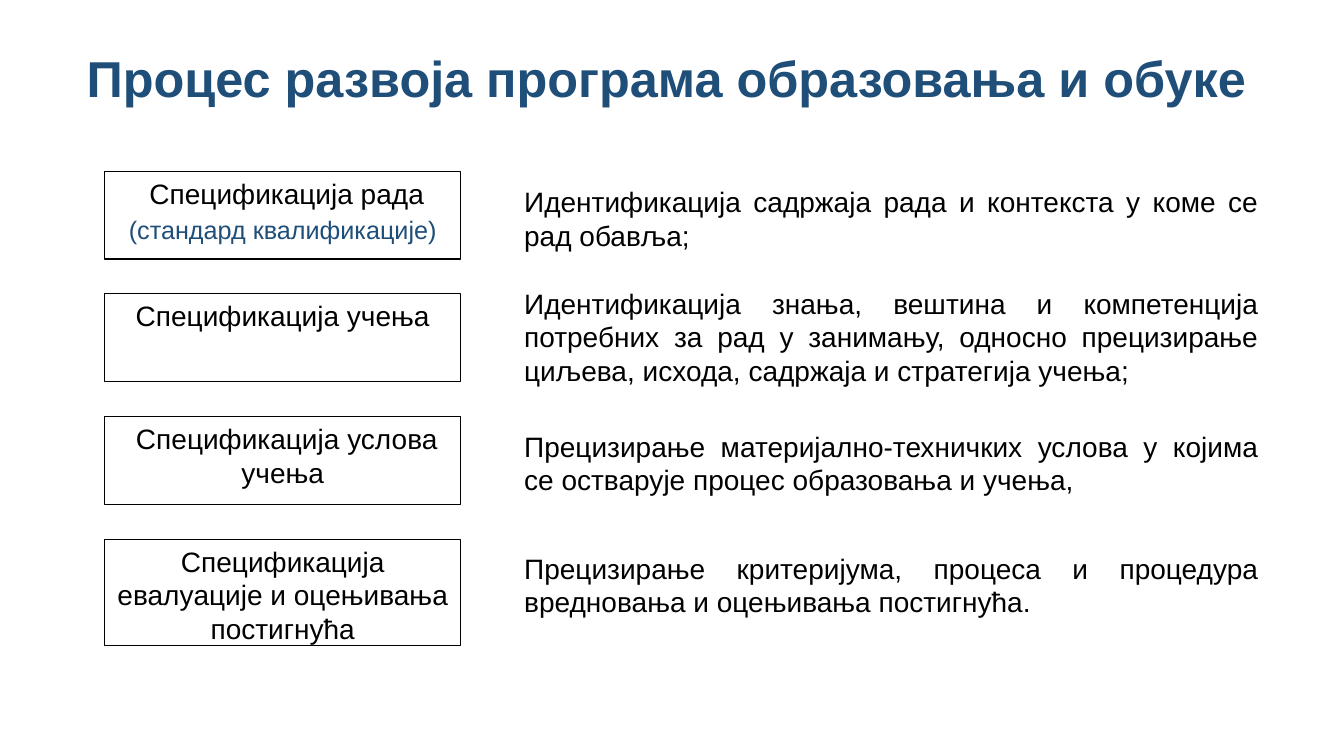
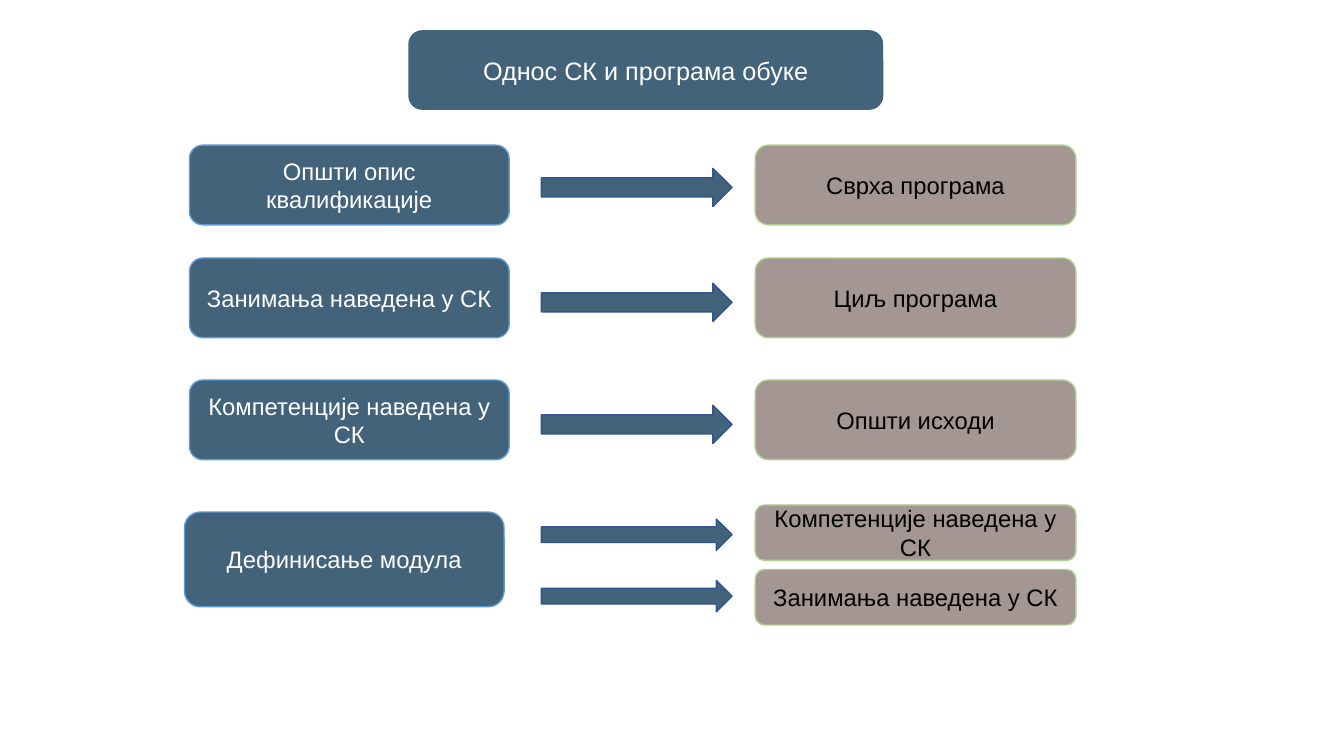
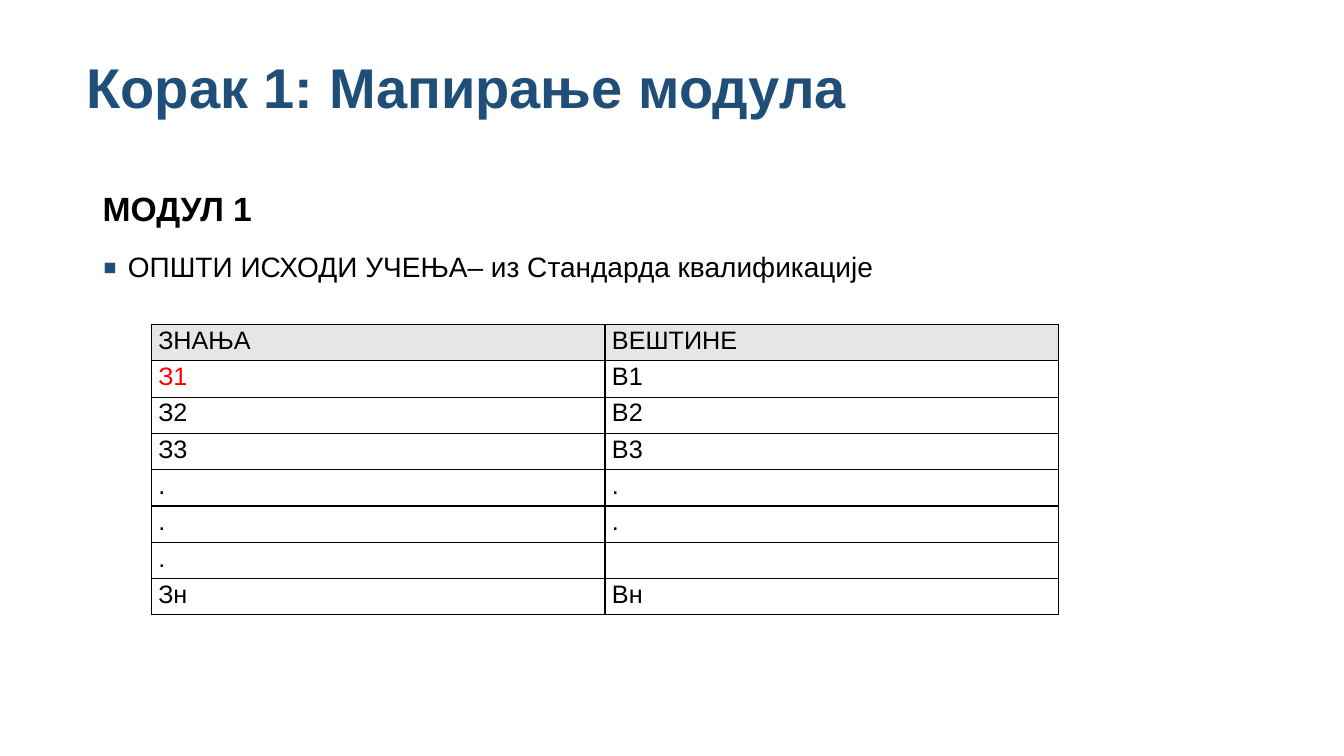
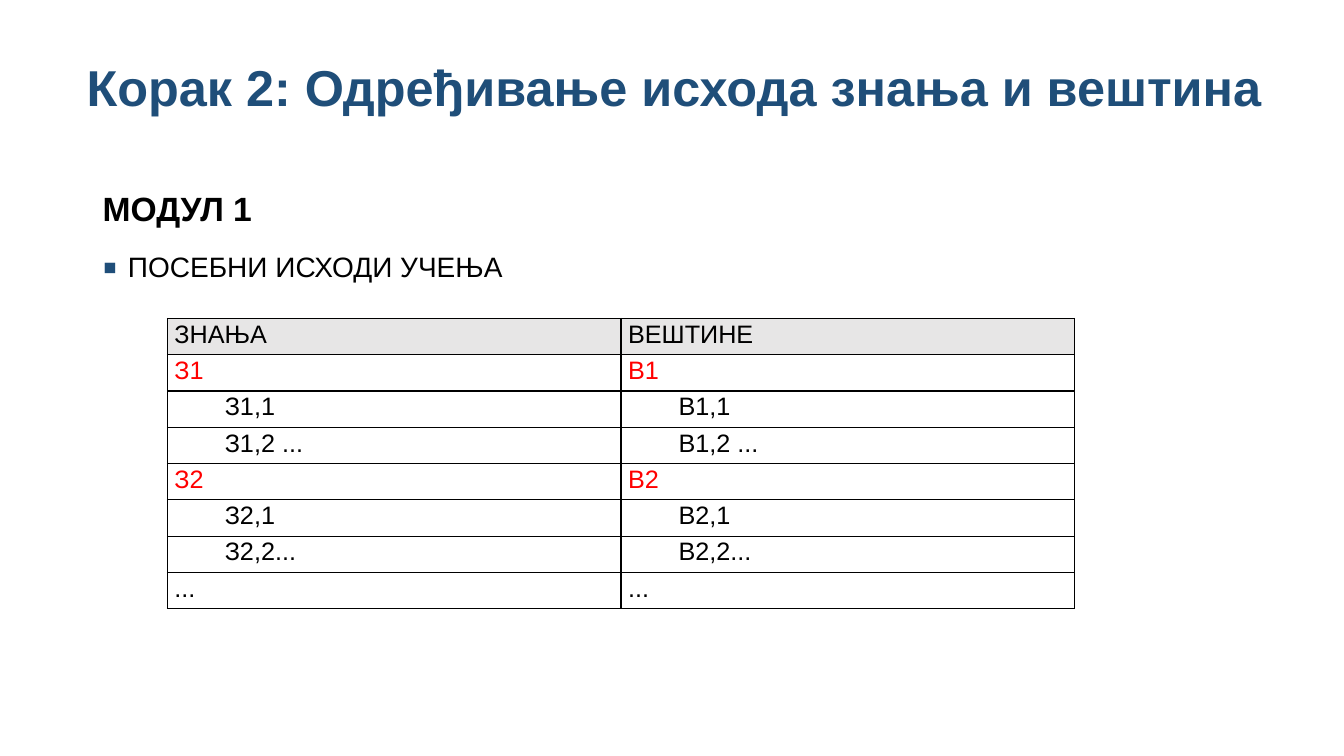
from dataclasses import dataclass

from lxml import etree
from pptx import Presentation
from pptx.dml.color import RGBColor
from pptx.enum.shapes import MSO_SHAPE
from pptx.enum.text import MSO_ANCHOR, MSO_AUTO_SIZE, PP_ALIGN
from pptx.oxml.ns import qn
from pptx.util import Inches, Pt

RECT, ROUND, ARROW = (MSO_SHAPE.RECTANGLE, MSO_SHAPE.ROUNDED_RECTANGLE,
                      MSO_SHAPE.RIGHT_ARROW)
LEFT, MID, JUST = PP_ALIGN.LEFT, PP_ALIGN.CENTER, PP_ALIGN.JUSTIFY
TOP, CENTER = MSO_ANCHOR.TOP, MSO_ANCHOR.MIDDLE
TITLE_ONLY, BLANK = 5, 6

FONT = "Arial"
INK = {
    "navy": "1F4E79", "black": "000000", "white": "FFFFFF", "red": "FF0000",
    "steel": "42637A", "sky": "5B9BD5", "taupe": "A49692", "green": "A9D18E",
    "edge": "325491", "head": "E7E6E6",
}


@dataclass
class Step:
    """A process step: its box, the box height and the text beside it."""
    name: str
    high: float
    note: str
    top: float
    tall: float
    after: float = 3
    sub: str = ""
    shift: float = 0


@dataclass
class Look:
    """Fill, outline and text colour of a shape."""
    fill: str
    line: str = ""
    width: float = 1
    ink: str = "black"


@dataclass
class Node:
    """A labelled block of the relation diagram."""
    label: str
    left: float
    top: float
    wide: float
    high: float
    look: Look


@dataclass
class Cell:
    """Table text; a sub-item is indented."""
    text: str
    ink: str = "black"
    sub: bool = False


BLUE = Look("steel", "sky", ink="white")
GREY = Look("taupe", "green")
BAND = Look("steel", "steel", 1.5, "white")
DART = Look("steel", "edge")
FRAME = Look("white", "black", 0.75)
PLAIN = Look("white")


def color(name: str) -> RGBColor:
    return RGBColor.from_string(INK[name])


def write(frame, text: str, *, size: float, ink: str = "black",
          bold: bool = False, align=LEFT, space: float = 1, before: float = 0,
          after: float = 0, indent: float = 0, margin: float = 0,
          bullet: str = "", more: bool = False) -> None:
    """Write one paragraph; more=True adds it below the earlier ones."""
    para = frame.add_paragraph() if more else frame.paragraphs[0]
    para.alignment, para.line_spacing = align, space
    para.space_before, para.space_after = Pt(before), Pt(after)
    props = para._p.get_or_add_pPr()
    props.set("marL", str(Inches(margin)))
    props.set("indent", str(Inches(indent)))
    if bullet:
        tint = etree.SubElement(props, qn("a:buClr"))
        etree.SubElement(tint, qn("a:srgbClr"), val=INK["navy"])
        etree.SubElement(props, qn("a:buSzPct"), val="150000")
        etree.SubElement(props, qn("a:buFont"), typeface=FONT)
        etree.SubElement(props, qn("a:buChar"), char=bullet)
    run = para.add_run()
    run.text = text
    font = run.font
    font.name, font.size, font.bold = FONT, Pt(size), bold
    font.color.rgb = color(ink)


def shape(slide, kind, left: float, top: float, wide: float, high: float,
          look: Look, anchor=CENTER):
    """Draw a preset shape and return its text frame."""
    item = slide.shapes.add_shape(kind, Inches(left), Inches(top),
                                  Inches(wide), Inches(high))
    item.shadow.inherit = False
    item.fill.solid()
    item.fill.fore_color.rgb = color(look.fill)
    if look.line:
        item.line.color.rgb = color(look.line)
        item.line.width = Pt(look.width)
    else:
        item.line.fill.background()
    frame = item.text_frame
    frame.word_wrap, frame.vertical_anchor = True, anchor
    return frame


def titled(deck, text: str, size: float, top: float = 0.4,
           high: float = 0.99):
    """Add a slide with the shared title style."""
    slide = deck.slides.add_slide(deck.slide_layouts[TITLE_ONLY])
    title = slide.shapes.title
    title.left, title.top = Inches(0.76), Inches(top)
    title.width, title.height = Inches(11.88), Inches(high)
    frame = title.text_frame
    frame.word_wrap, frame.vertical_anchor = True, CENTER
    frame.auto_size = MSO_AUTO_SIZE.NONE
    write(frame, text, size=size, ink="navy", bold=True, space=0.9)
    return slide


def border(cell) -> None:
    props = cell._tc.get_or_add_tcPr()
    for side in ("lnL", "lnR", "lnT", "lnB"):
        line = etree.SubElement(props, qn(f"a:{side}"), w=str(Pt(1)))
        fill = etree.SubElement(line, qn("a:solidFill"))
        etree.SubElement(fill, qn("a:srgbClr"), val=INK["black"])


def grid(slide, left: float, top: float, rows: list[tuple[Cell, Cell]]) -> None:
    """Draw the two-column table of knowledge and skills."""
    rows = [(Cell("ЗНАЊА"), Cell("ВЕШТИНЕ")), *rows]
    high = 0.36
    table = slide.shapes.add_table(len(rows), 2, Inches(left), Inches(top),
                                   Inches(9), Inches(high * len(rows))).table
    table.first_row = table.horz_banding = False
    for i, row in enumerate(rows):
        table.rows[i].height = Inches(high)
        for j, item in enumerate(row):
            cell = table.cell(i, j)
            cell.margin_left = cell.margin_right = Inches(0.07)
            cell.margin_top = cell.margin_bottom = 0
            border(cell)
            if i:
                cell.fill.background()
            else:
                cell.fill.solid()
                cell.fill.fore_color.rgb = color("head")
            if item.text:
                write(cell.text_frame, item.text, size=18, ink=item.ink,
                      space=1.07, margin=0.5 if item.sub else 0)


def module(deck, title: str, size: float, goal: str, left: float, top: float,
           rows: list[tuple[Cell, Cell]]) -> None:
    """Build a module slide: title, heading, bullet and table."""
    slide = titled(deck, title, size)
    box = slide.shapes.add_textbox(Inches(0.92), Inches(1.79),
                                   Inches(11.5), Inches(1.2))
    frame = box.text_frame
    frame.word_wrap = True
    write(frame, "МОДУЛ 1", size=24, bold=True, space=1.07, after=8)
    write(frame, goal, size=20, space=0.9, before=10, margin=0.25,
          indent=-0.25, bullet="▪", more=True)
    grid(slide, left, top, rows)


def process(deck) -> None:
    slide = titled(deck, "Процес развоја програма образовања и обуке", 36,
                   0.37, 0.87)
    steps = [
        Step("Спецификација рада", 0.87,
             "Идентификација садржаја рада и контекста у коме се рад обавља;",
             1.78, 0.71, sub="(стандард квалификације)", shift=0.08),
        Step("Спецификацијa учења", 0.87,
             "Идентификација знања, вештина и компетенција потребних за рад у "
             "занимању, односно прецизирање циљева, исхода, садржаја и "
             "стратегија учења;", 2.79, 1.03),
        Step("Спецификацијa услова учења", 0.87,
             "Прецизирање материјално-техничких услова у којима се остварује "
             "процес образовања и учења,", 4.21, 0.73, shift=0.08),
        Step("Спецификацијa евалуaције и оцењивањa постигнућа", 1.06,
             "Прецизирање критеријума, процеса и процедура вредновања и "
             "оцењивања постигнућа.", 5.42, 0.87, after=6),
    ]
    for i, step in enumerate(steps):
        frame = shape(slide, RECT, 1.04, 1.7 + 1.216 * i, 3.53, step.high,
                      FRAME, TOP)
        write(frame, step.name, size=20, align=MID, indent=step.shift)
        if step.sub:
            write(frame, step.sub, size=18, ink="navy", align=MID, before=3,
                  more=True)
        note = shape(slide, RECT, 5.1, step.top, 7.48, step.tall, PLAIN, TOP)
        write(note, step.note, size=20, align=JUST, after=step.after)


def relation(deck) -> None:
    slide = deck.slides.add_slide(deck.slide_layouts[BLANK])
    head = shape(slide, ROUND, 4.06, 0.31, 4.69, 0.77, BAND)
    write(head, "Однос СК и програма обуке", size=18, ink="white", align=MID)

    # Blocks on both sides
    pairs = [
        (1.44, "Општи опис квалификације", "Сврха програма"),
        (2.56, "Занимања наведена у СК", "Циљ програма"),
        (3.77, "Компетенције наведена у СК", "Општи исходи"),
    ]
    nodes = [Node("Дефинисање модула", 1.83, 5.08, 3.17, 0.94, BLUE),
             Node("Компетенције наведена у СК", 7.49, 5.01, 3.18, 0.55, GREY),
             Node("Занимања наведена у СК", 7.49, 5.65, 3.18, 0.55, GREY)]
    for top, source, target in pairs:
        nodes += [Node(source, 1.88, top, 3.17, 0.79, BLUE),
                  Node(target, 7.49, top, 3.18, 0.79, GREY)]
    for node in nodes:
        frame = shape(slide, ROUND, node.left, node.top, node.wide, node.high,
                      node.look)
        write(frame, node.label, size=17, ink=node.look.ink, align=MID)

    # Arrows between them
    for top, high in ((1.67, 0.38), (2.81, 0.38), (4.02, 0.38),
                      (5.15, 0.31), (5.76, 0.31)):
        shape(slide, ARROW, 5.37, top, 1.89, high, DART)


def mapping(deck) -> None:
    rows = [(Cell("З1", "red"), Cell("В1"))]
    rows += [(Cell(a), Cell(b)) for a, b in (
        ("З2", "В2"), ("З3", "В3"), (".", "."), (".", "."), (".", ""),
        ("Зн", "Вн"))]
    module(deck, "Корак 1: Мапирање модула", 40,
           "ОПШТИ ИСХОДИ УЧЕЊА– из Стандарда квалификације", 1.5, 3.22, rows)


def outcomes(deck) -> None:
    rows = []
    for num, tail in ((1, " ..."), (2, "...")):
        rows.append((Cell(f"З{num}", "red"), Cell(f"В{num}", "red")))
        for end in (",1", f",2{tail}"):
            rows.append((Cell(f"З{num}{end}", sub=True),
                         Cell(f"В{num}{end}", sub=True)))
    rows.append((Cell("..."), Cell("...")))
    module(deck, "Корак 2: Одређивање исхода знања и вештина", 36,
           "ПОСЕБНИ ИСХОДИ УЧЕЊА", 1.66, 3.16, rows)


def main() -> None:
    deck = Presentation()
    deck.slide_width, deck.slide_height = Inches(13.33), Inches(7.5)
    for build in (process, relation, mapping, outcomes):
        build(deck)
    deck.save("out.pptx")


if __name__ == "__main__":
    main()
